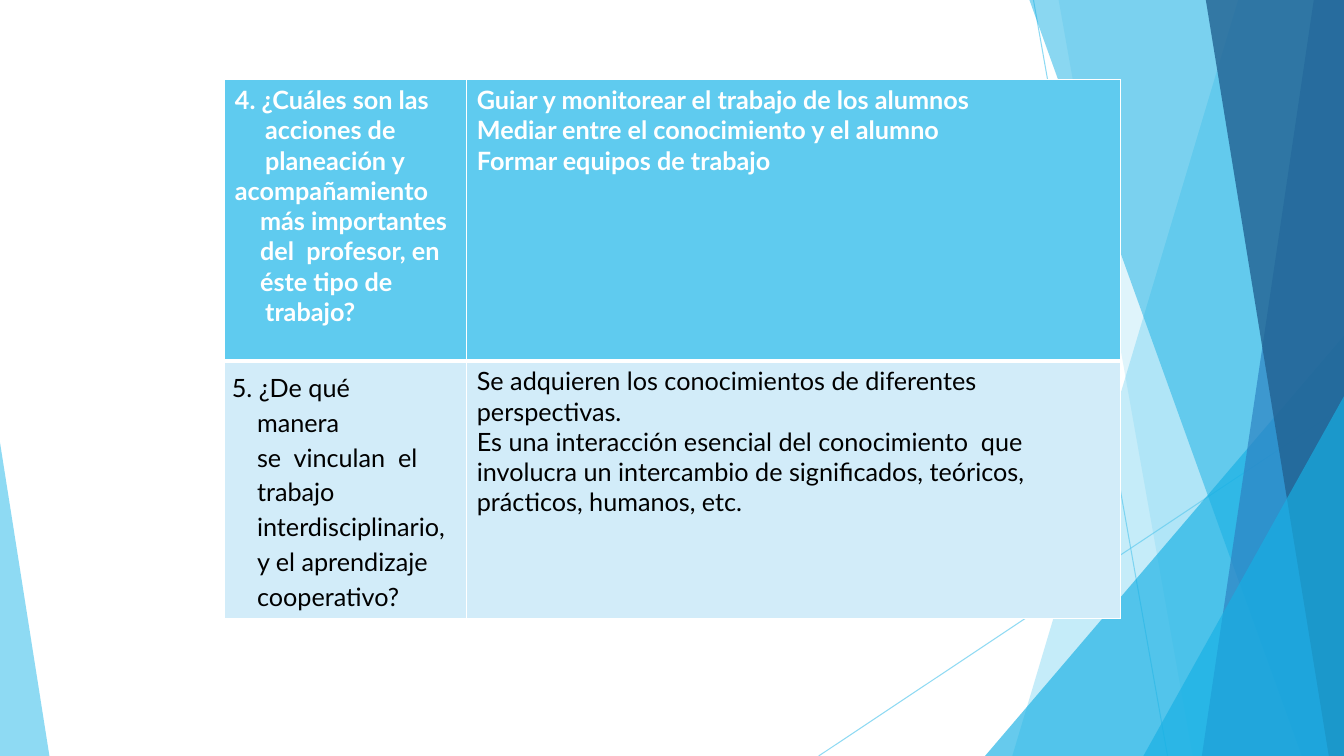
import pptx
import pptx.util
import pptx.dml.color
import pptx.enum.shapes
import pptx.enum.text
import pptx.oxml
import pptx.oxml.ns
from dataclasses import dataclass


@dataclass(frozen=True)
class Theme:
    font: str = "Lato"
    size: int = 18
    sky: str = "5FCBEF"
    cyan: str = "17B0E4"
    blue: str = "2E83C3"
    navy: str = "226292"
    pale: str = "D2ECF9"
    white: str = "FFFFFF"
    black: str = "000000"
    hairline: float = 0.75
    thin: int = 1
    thick: int = 3


THEME = Theme()
WIDTH, HEIGHT = 13.33, 7.5

QUESTION_4 = [
    ("4. ¿Cuáles son las", 0),
    ("acciones de", 0.3),
    ("planeación y acompañamiento", 0.3),
    ("más importantes", 0.25),
    ("del  profesor, en", 0.25),
    ("éste tipo de", 0.25),
    ("trabajo?", 0.3),
]
ANSWER_4 = [
    ("Guiar y monitorear el trabajo de los alumnos", 0),
    ("Mediar entre el conocimiento y el alumno", 0),
    ("Formar equipos de trabajo", 0),
]
QUESTION_5 = [("5. ¿De qué", 0)] + [
    (line, 0.25)
    for line in (
        "manera",
        "se  vinculan  el",
        "trabajo",
        "interdisciplinario,",
        "y el aprendizaje",
        "cooperativo?",
    )
]
ANSWER_5 = [
    ("Se adquieren los conocimientos de diferentes perspectivas.", 0),
    ("Es una interacción esencial del conocimiento  que involucra un intercambio "
     "de significados, teóricos, prácticos, humanos, etc.", 0),
]
ROWS = [(QUESTION_4, ANSWER_4), (QUESTION_5, ANSWER_5)]
TABLE_LEFT, TABLE_TOP = 2.23, 0.79
COLUMN_WIDTHS = [2.4, 6.48]
ROW_HEIGHTS = [2.79, 2.56]

RAYS = [((10.25, 0), (11.58, HEIGHT)), ((WIDTH, 4.03), (8.12, HEIGHT))]
BANDS = [
    ("band", 12.28, 10.04, THEME.sky, 36),
    ("band", 10.5, 11.83, THEME.sky, 20),
    ("triangle", 9.77, 3.33, THEME.cyan, 66),
    ("band", 10.21, 12.91, THEME.cyan, 50),
    ("band", 13.03, 11.92, THEME.blue, 70),
    ("band", 11.96, 13.18, THEME.navy, 80),
    ("triangle", 11.34, 3.93, THEME.cyan, 66),
]
LEFT_WEDGE = (0.49, 4.39, THEME.sky, 70)


def inches(value):
    return pptx.util.Inches(value)


def rgb(code):
    return pptx.dml.color.RGBColor.from_string(code)


def set_alpha(fill_owner, percent):
    color = next(fill_owner.iter(pptx.oxml.ns.qn("a:srgbClr")))
    alpha = color.makeelement(pptx.oxml.ns.qn("a:alpha"), {"val": str(percent * 1000)})
    color.append(alpha)


def paint(shape, color, percent):
    shape.shadow.inherit = False
    shape.line.fill.background()
    shape.fill.solid()
    shape.fill.fore_color.rgb = rgb(color)
    set_alpha(shape.fill._xPr, percent)


def add_ray(page, start, end):
    ray = page.shapes.add_connector(
        pptx.enum.shapes.MSO_CONNECTOR.STRAIGHT, *map(inches, start + end))
    ray.line.color.rgb = rgb(THEME.sky)
    ray.line.width = pptx.util.Pt(THEME.hairline)
    properties = ray._element.spPr
    set_alpha(properties, 70)
    properties.append(properties.makeelement(pptx.oxml.ns.qn("a:effectLst"), {}))


def add_band(page, top_x, bottom_x, color, percent):
    corners = [(WIDTH, 0), (WIDTH, HEIGHT), (bottom_x, HEIGHT)]
    builder = page.shapes.build_freeform(inches(top_x), 0)
    builder.add_line_segments([(inches(x), inches(y)) for x, y in corners], close=True)
    paint(builder.convert_to_shape(), color, percent)


def add_triangle(page, left, right, top, apex, color, percent):
    triangle = page.shapes.add_shape(
        pptx.enum.shapes.MSO_SHAPE.ISOSCELES_TRIANGLE,
        *map(inches, (left, top, right - left, HEIGHT - top)))
    triangle.adjustments[0] = apex
    paint(triangle, color, percent)


def add_borders(cell, top, bottom):
    properties = cell._tc.get_or_add_tcPr()
    edges = [("lnL", THEME.thin), ("lnR", THEME.thin), ("lnT", top), ("lnB", bottom)]
    for position, (edge, points) in enumerate(edges):
        properties.insert(position, pptx.oxml.parse_xml(
            f'<a:{edge} {pptx.oxml.ns.nsdecls("a")} w="{pptx.util.Pt(points)}">'
            f'<a:solidFill><a:srgbClr val="{THEME.white}"/></a:solidFill></a:{edge}>'))


def fill_cell(cell, lines, header, spacing):
    cell.fill.solid()
    cell.fill.fore_color.rgb = rgb(THEME.sky if header else THEME.pale)
    frame = cell.text_frame
    for index, (text, indent) in enumerate(lines):
        para = frame.paragraphs[0] if index == 0 else frame.add_paragraph()
        para.text = text
        para.line_spacing = spacing
        para.font.name = THEME.font
        para.font.size = pptx.util.Pt(THEME.size)
        para.font.bold = header
        para.font.color.rgb = rgb(THEME.white if header else THEME.black)
        properties = para._p.get_or_add_pPr()
        properties.set("marL", "0")
        properties.set("indent", str(inches(indent)))


def add_questions(page):
    frame = page.shapes.add_table(
        len(ROWS), len(COLUMN_WIDTHS), inches(TABLE_LEFT), inches(TABLE_TOP),
        inches(sum(COLUMN_WIDTHS)), inches(sum(ROW_HEIGHTS)))
    table = frame.table
    table.horz_banding = False
    for column, width in zip(table.columns, COLUMN_WIDTHS):
        column.width = inches(width)
    for row_index, contents in enumerate(ROWS):
        table.rows[row_index].height = inches(ROW_HEIGHTS[row_index])
        header = row_index == 0
        for column_index, lines in enumerate(contents):
            cell = table.cell(row_index, column_index)
            loose = not header and column_index == 0
            fill_cell(cell, lines, header, 1.15 if loose else 1.0)
            if loose:
                cell.vertical_anchor = pptx.enum.text.MSO_ANCHOR.MIDDLE
                cell.margin_left = cell.margin_right = inches(0.07)
                cell.margin_top = cell.margin_bottom = inches(0.07)
            add_borders(cell, THEME.thin if header else THEME.thick,
                        THEME.thick if header else THEME.thin)


def main():
    deck = pptx.Presentation()
    deck.slide_width, deck.slide_height = inches(WIDTH), inches(HEIGHT)
    page = deck.slides.add_slide(deck.slide_layouts[6])
    for start, end in RAYS:
        add_ray(page, start, end)
    for kind, first, second, color, percent in BANDS:
        if kind == "band":
            add_band(page, first, second, color, percent)
        else:
            add_triangle(page, first, WIDTH, second, 1, color, percent)
    right, top, color, percent = LEFT_WEDGE
    add_triangle(page, 0, right, top, 0, color, percent)
    add_questions(page)
    deck.save("out.pptx")


if __name__ == "__main__":
    main()
